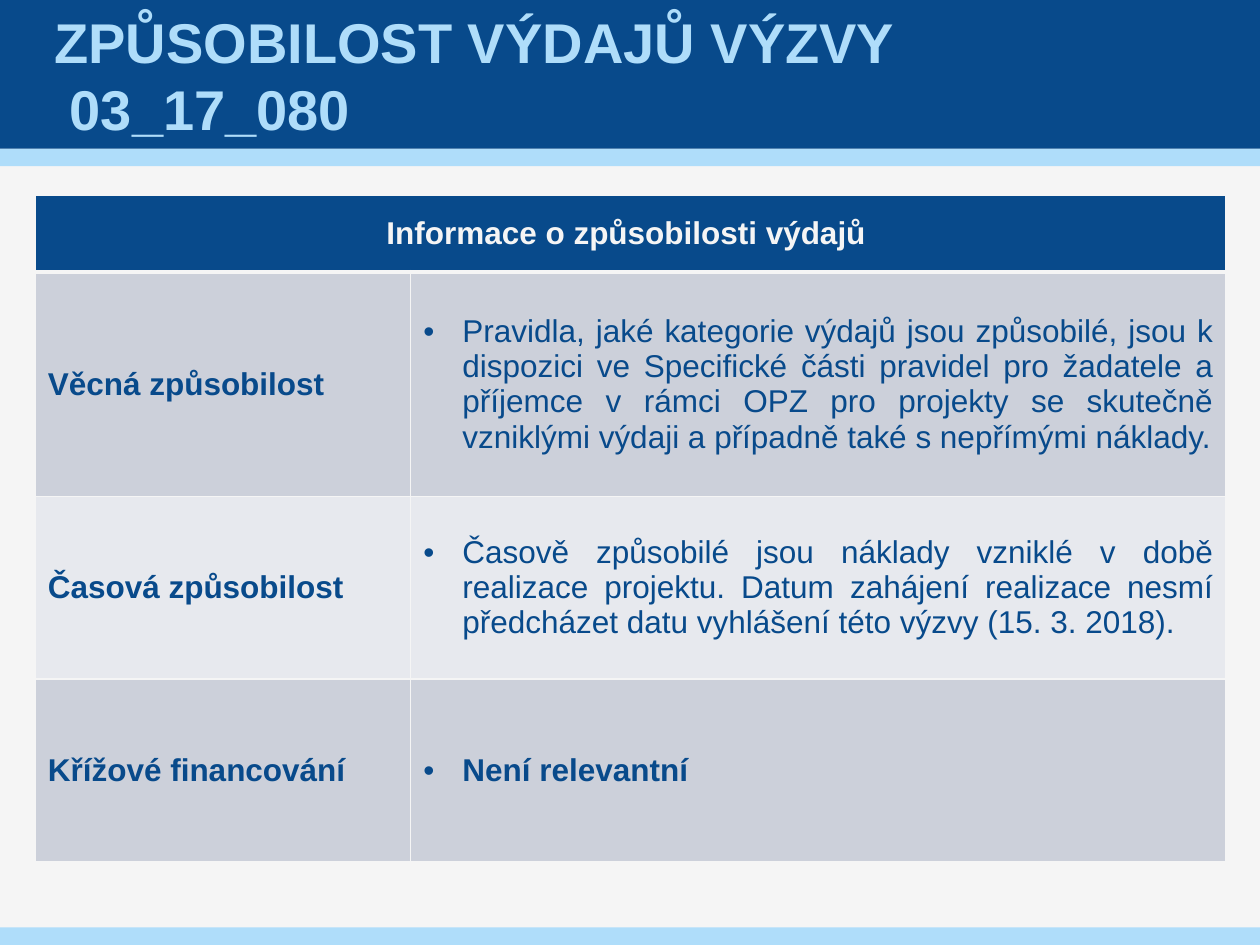
from dataclasses import dataclass

from lxml import etree
from pptx import Presentation
from pptx.dml.color import RGBColor
from pptx.enum.shapes import MSO_SHAPE
from pptx.enum.text import MSO_ANCHOR, MSO_AUTO_SIZE, PP_ALIGN
from pptx.oxml.ns import qn
from pptx.util import Inches, Pt

RECTANGLE = MSO_SHAPE.RECTANGLE
MIDDLE = MSO_ANCHOR.MIDDLE
NO_AUTOFIT = MSO_AUTO_SIZE.NONE
LEFT, CENTER, JUSTIFY = PP_ALIGN.LEFT, PP_ALIGN.CENTER, PP_ALIGN.JUSTIFY

FONT = "Arial"
COLORS = {
    "paper": "F5F5F5",
    "navy": "084A8B",
    "sky": "AFDDFA",
    "band_dark": "CCD0DA",
    "band_light": "E7E9EE",
}
COLUMN_WIDTHS = (2.98, 6.47)
ROW_HEIGHTS = (0.61, 1.78, 1.45, 1.45)


@dataclass
class Bar:
    top: float
    height: float
    color: str


@dataclass
class Eligibility:
    name: str
    detail: str
    align: PP_ALIGN = JUSTIFY
    bold: bool = False


BARS = (Bar(1.18, 0.14, "sky"), Bar(0, 1.18, "navy"), Bar(7.36, 0.14, "sky"))
TITLE = "ZPŮSOBILOST VÝDAJŮ VÝZVY \v 03_17_080"
HEADER = "Informace o způsobilosti výdajů "
ROWS = (
    Eligibility(
        "Věcná způsobilost",
        "Pravidla, jaké kategorie výdajů jsou způsobilé, jsou k dispozici ve "
        "Specifické části pravidel pro žadatele a příjemce v rámci OPZ pro "
        "projekty se skutečně vzniklými výdaji a případně také s nepřímými náklady.",
    ),
    Eligibility(
        "Časová způsobilost",
        "Časově způsobilé jsou náklady vzniklé v době realizace projektu. Datum "
        "zahájení realizace nesmí předcházet datu vyhlášení této výzvy (15. 3. 2018).",
    ),
    Eligibility("Křížové financování", "Není relevantní", LEFT, True),
)


def rgb(name: str) -> RGBColor:
    return RGBColor.from_string(COLORS[name])


def format_text(para, size: int, color: str, bold: bool, align: PP_ALIGN) -> None:
    para.alignment = align
    for span in para.runs:
        span.font.name = FONT
        span.font.size = Pt(size)
        span.font.bold = bold
        span.font.color.rgb = rgb(color)


def draw_bar(page, bar: Bar):
    box = page.shapes.add_shape(
        RECTANGLE, 0, Inches(bar.top), Inches(10), Inches(bar.height)
    )
    box.shadow.inherit = False
    box.fill.solid()
    box.fill.fore_color.rgb = rgb(bar.color)
    box.line.fill.background()
    return box


def draw_title(page) -> None:
    title = page.shapes.title
    title.left, title.top = Inches(0.39), Inches(0)
    title.width, title.height = Inches(9.21), Inches(1.18)
    frame = title.text_frame
    frame.text = TITLE
    frame.word_wrap = True
    frame.auto_size = NO_AUTOFIT
    frame.vertical_anchor = MIDDLE
    frame.margin_left = frame.margin_right = Inches(0.04)
    frame.margin_top = frame.margin_bottom = 0
    format_text(frame.paragraphs[0], 32, "sky", True, LEFT)


def add_borders(cell, top: float, bottom: float) -> None:
    properties = cell._tc.get_or_add_tcPr()
    for side, width in (("L", 1), ("R", 1), ("T", top), ("B", bottom)):
        line = etree.SubElement(properties, qn(f"a:ln{side}"), w=str(Pt(width)))
        fill = etree.SubElement(line, qn("a:solidFill"))
        etree.SubElement(fill, qn("a:srgbClr"), val=COLORS["paper"])


def add_bullet(para) -> None:
    properties = para._p.get_or_add_pPr()
    properties.set("marL", str(Inches(0.31)))
    properties.set("indent", str(Inches(-0.31)))
    etree.SubElement(properties, qn("a:buFont"), typeface=FONT)
    etree.SubElement(properties, qn("a:buChar"), char="•")


def fill_cell(cell, text: str, color: str, bold: bool, align: PP_ALIGN):
    cell.text = text
    cell.vertical_anchor = MIDDLE
    para = cell.text_frame.paragraphs[0]
    format_text(para, 18, color, bold, align)
    return para


def draw_table(page) -> None:
    table = page.shapes.add_table(
        len(ROW_HEIGHTS), len(COLUMN_WIDTHS), Inches(0.28), Inches(1.55),
        Inches(sum(COLUMN_WIDTHS)), Inches(sum(ROW_HEIGHTS)),
    ).table
    for column, width in zip(table.columns, COLUMN_WIDTHS):
        column.width = Inches(width)
    for index, height in enumerate(ROW_HEIGHTS):
        table.rows[index].height = Inches(height)
        band = "navy" if index == 0 else ("band_light", "band_dark")[index % 2]
        for cell in table.rows[index].cells:
            add_borders(cell, 3 if index == 1 else 1, 3 if index == 0 else 1)
            cell.fill.solid()
            cell.fill.fore_color.rgb = rgb(band)

    table.cell(0, 0).merge(table.cell(0, 1))
    fill_cell(table.cell(0, 0), HEADER, "paper", True, CENTER)
    for index, row in enumerate(ROWS, start=1):
        fill_cell(table.cell(index, 0), row.name, "navy", True, LEFT)
        para = fill_cell(table.cell(index, 1), row.detail, "navy", row.bold, row.align)
        add_bullet(para)


def main() -> None:
    deck = Presentation()
    deck.slide_width, deck.slide_height = Inches(10), Inches(7.5)
    page = deck.slides.add_slide(deck.slide_layouts[5])
    page.background.fill.solid()
    page.background.fill.fore_color.rgb = rgb("paper")
    boxes = [draw_bar(page, bar) for bar in BARS]
    draw_title(page)
    boxes[-1].element.addnext(page.shapes.title.element)
    draw_table(page)
    deck.save("out.pptx")


if __name__ == "__main__":
    main()
